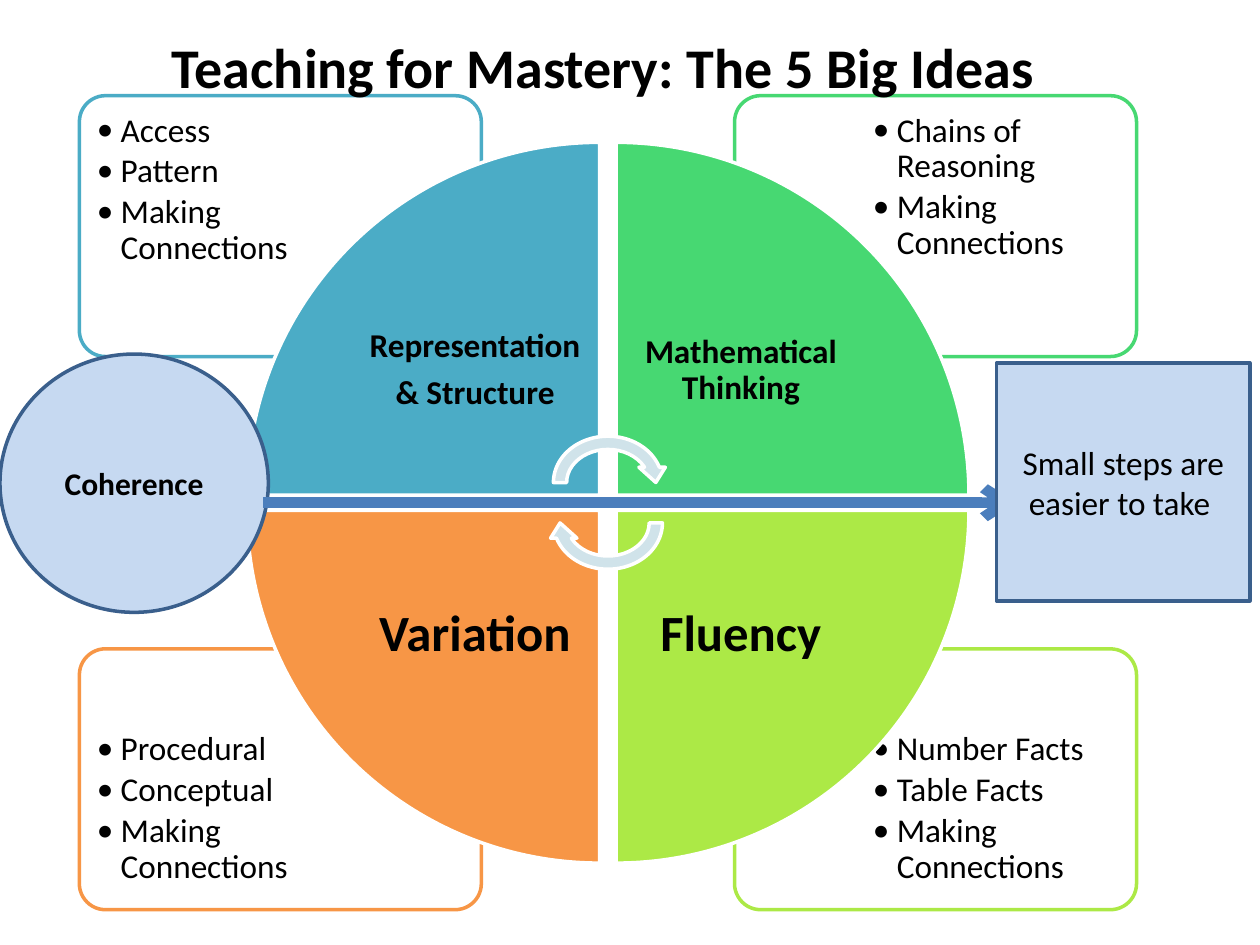
from collections import namedtuple

from lxml import etree
from pptx import Presentation
from pptx.dml.color import RGBColor
from pptx.enum import shapes, text
from pptx.oxml import ns
from pptx.util import Inches, Pt

BLACK = RGBColor(0, 0, 0)
WHITE = RGBColor(255, 255, 255)
TEAL = RGBColor(0x4B, 0xAC, 0xC6)
GREEN = RGBColor(0x47, 0xD8, 0x72)
LIME = RGBColor(0xAC, 0xE9, 0x46)
ORANGE = RGBColor(0xF7, 0x96, 0x46)
PALE_TEAL = RGBColor(0xD0, 0xE3, 0xEA)
PALE_BLUE = RGBColor(0xC6, 0xD9, 0xF1)
NAVY = RGBColor(0x3A, 0x5F, 0x8C)
BLUE = RGBColor(0x4B, 0x7E, 0xBC)

KIND = shapes.MSO_SHAPE
Box = namedtuple("Box", "left top width height")
Idea = namedtuple("Idea", "right low color turn title size points")

IDEAS = [
    Idea(1, 1, LIME, 180, ["Fluency"], 29,
         ["Number Facts", "Table Facts", "Making Connections"]),
    Idea(0, 1, ORANGE, 270, ["Variation"], 29,
         ["Procedural", "Conceptual", "Making Connections"]),
    Idea(1, 0, GREEN, 90, ["Mathematical Thinking"], 19,
         ["Chains of Reasoning", "Making Connections"]),
    Idea(0, 0, TEAL, 0, ["Representation", "& Structure"], 19,
         ["Access", "Pattern", "Making Connections"]),
]


def add_element(parent, tag, **values):
    """Append a DrawingML element with the given attributes."""
    return etree.SubElement(parent, ns.qn(tag), values)


def draw_shape(page, kind, box, fill, line, turn=0):
    """Draw a filled preset shape with a two-point outline."""
    shape = page.shapes.add_shape(kind, *map(Inches, box))
    shape.shadow.inherit = False
    shape.rotation = turn
    shape.fill.solid()
    shape.fill.fore_color.rgb = fill
    shape.line.color.rgb = line
    shape.line.width = Pt(2)
    return shape


def write_text(shape, lines, size, bold=False, inset=0.1, edge=0.05,
               anchor=text.MSO_ANCHOR.MIDDLE, align=text.PP_ALIGN.CENTER,
               spacing=None, gap=0, bullet=False):
    """Fill a shape with one formatted paragraph per line."""
    frame = shape.text_frame
    layout = {"word_wrap": True, "vertical_anchor": anchor,
              "margin_left": Inches(inset), "margin_right": Inches(inset),
              "margin_top": Inches(edge), "margin_bottom": Inches(edge)}
    for name, value in layout.items():
        setattr(frame, name, value)
    for number, line in enumerate(lines):
        para = frame.add_paragraph() if number else frame.paragraphs[0]
        para_format = {"alignment": align, "line_spacing": spacing,
                       "space_after": Pt(gap)}
        for name, value in para_format.items():
            setattr(para, name, value)
        span = para.add_run()
        span.text = line
        for name, value in {"name": "Calibri", "size": Pt(size), "bold": bold}.items():
            setattr(span.font, name, value)
        span.font.color.rgb = BLACK
        if bullet:
            properties = para._p.get_or_add_pPr()
            properties.set("marL", str(Inches(0.19)))
            properties.set("indent", str(Inches(-0.19)))
            add_element(properties, "a:buFont", typeface="Calibri")
            add_element(properties, "a:buChar", char="•")


def draw_card(page, box, idea):
    """Draw the outlined card with an idea's bullet points."""
    card = draw_shape(page, KIND.ROUNDED_RECTANGLE, box, WHITE, idea.color)
    card.adjustments[0] = 0.1
    color = card.fill._xPr.find(".//" + ns.qn("a:srgbClr"))
    add_element(color, "a:alpha", val="90000")
    area = Box(box.left + (1 if idea.right else 0.04),
               box.top + (0.56 if idea.low else 0.04), 2.14, 1.46)
    label = page.shapes.add_textbox(*map(Inches, area))
    write_text(label, idea.points, 19, edge=0.1, anchor=text.MSO_ANCHOR.TOP,
               align=text.PP_ALIGN.LEFT, spacing=0.9, gap=2.85, bullet=True)


def draw_quadrant(page, box, idea):
    """Draw a quarter of the wheel and its title near the centre."""
    draw_shape(page, KIND.PIE_WEDGE, box, idea.color, WHITE, idea.turn)
    side = 1.98
    area = Box(box.left + (0 if idea.right else box.width - side),
               box.top + (0 if idea.low else box.height - side), side, side)
    label = page.shapes.add_textbox(*map(Inches, area))
    write_text(label, idea.title, idea.size, True, 0.14, 0.14,
               spacing=0.9, gap=idea.size * 0.35)


def draw_wheel(page, box):
    """Draw the four cards, the wheel and the turning arrows."""
    for idea in IDEAS:
        corner = Box(box.left + 5.2 * idea.right, box.top + 4.39 * idea.low, 3.19, 2.07)
        draw_card(page, corner, idea)
    for idea in reversed(IDEAS):
        quarter = Box(box.left + 1.33 + 2.93 * idea.right,
                      box.top + 0.37 + 2.92 * idea.low, 2.8, 2.8)
        draw_quadrant(page, quarter, idea)
    for drop, turn in ((2.65, 0), (2.97, 180)):
        area = Box(box.left + 3.71, box.top + drop, 0.97, 0.84)
        draw_shape(page, KIND.CIRCULAR_ARROW, area, PALE_TEAL, WHITE, turn)


def draw_title(page, box):
    """Write the slide heading."""
    title = page.shapes.add_textbox(*map(Inches, box))
    write_text(title, ["Teaching for Mastery: The 5 Big Ideas "], 32, True,
               anchor=text.MSO_ANCHOR.TOP)


def draw_coherence(page, box):
    """Draw the coherence circle, its arrow and the result it leads to."""
    circle = Box(box.left, box.top, 2.13, 2.05)
    shape = draw_shape(page, KIND.OVAL, circle, PALE_BLUE, NAVY)
    write_text(shape, ["Coherence"], 18, True)
    level = box.top + 1.18
    ends = (box.left + 2.09, level, box.left + 8.07, level)
    arrow = page.shapes.add_connector(shapes.MSO_CONNECTOR.STRAIGHT, *map(Inches, ends))
    arrow.line.color.rgb = BLUE
    arrow.line.width = Pt(6)
    add_element(arrow.line._get_or_add_ln(), "a:tailEnd", type="arrow")
    add_element(arrow._element.spPr, "a:effectLst")
    result = Box(box.left + 7.91, box.top + 0.07, 2.01, 1.89)
    shape = draw_shape(page, KIND.RECTANGLE, result, PALE_BLUE, NAVY)
    write_text(shape, ["Small steps are easier to take "], 19)


def main():
    """Build and save the slide."""
    deck = Presentation()
    deck.slide_width, deck.slide_height = Inches(10), Inches(7.5)
    page = deck.slides.add_slide(deck.slide_layouts[6])
    draw_wheel(page, Box(0.63, 0.76, 8.39, 6.46))
    draw_title(page, Box(1.06, 0.21, 7.56, 0.64))
    draw_coherence(page, Box(0, 2.81, 9.92, 2.05))
    deck.save("out.pptx")


if __name__ == "__main__":
    main()
